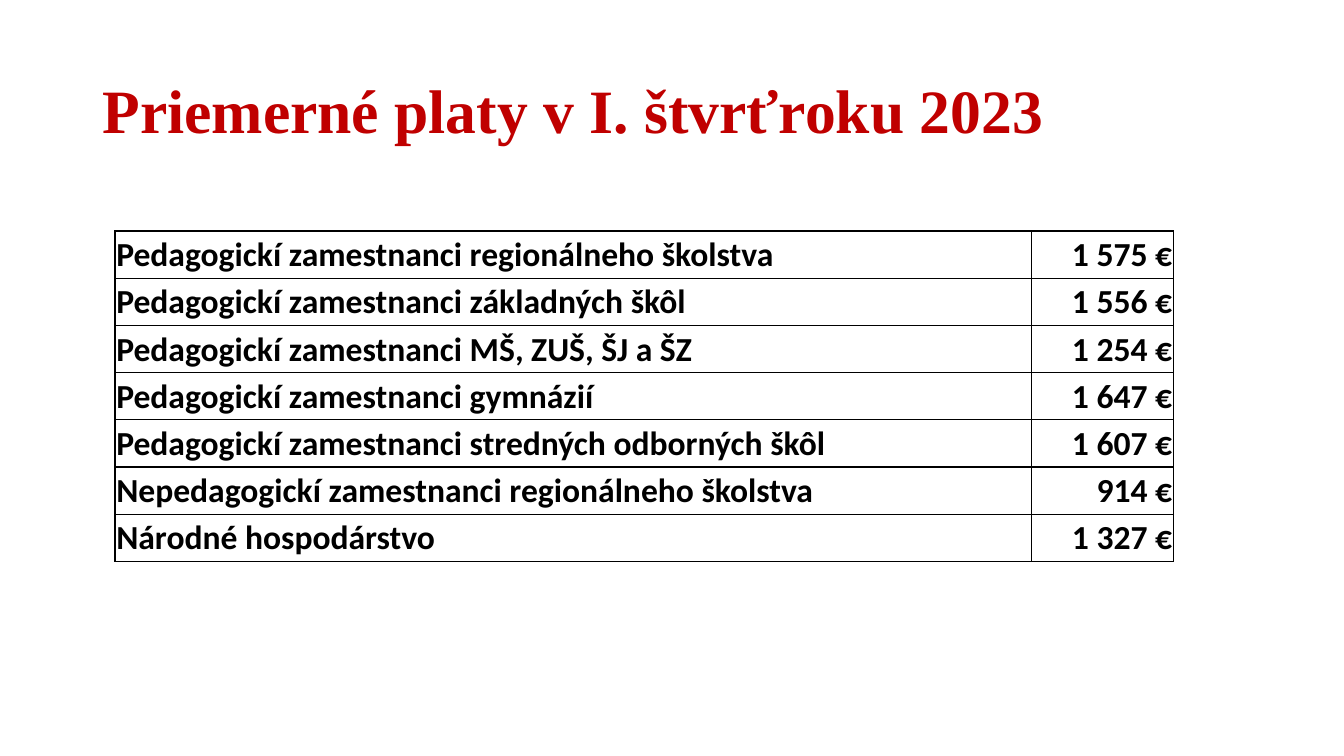
from dataclasses import dataclass

from lxml.etree import SubElement
from pptx import Presentation
from pptx.dml.color import RGBColor
from pptx.enum.text import MSO_ANCHOR, MSO_AUTO_SIZE, PP_ALIGN
from pptx.oxml.ns import qn
from pptx.slide import Slide
from pptx.table import _Cell
from pptx.text.text import _Paragraph
from pptx.util import Cm, Pt


@dataclass(frozen=True)
class TextStyle:
    font: str
    size: int
    color: str


@dataclass(frozen=True)
class Theme:
    title: TextStyle = TextStyle("Times New Roman", 44, "C00000")
    cell: TextStyle = TextStyle("Calibri", 24, "000000")
    border_color: str = "000000"
    border_width: int = Pt(1)


@dataclass(frozen=True)
class Salary:
    group: str
    amount: str


THEME = Theme()
TITLE = "Priemerné platy v I. štvrťroku 2023"
SALARIES = [
    Salary("Pedagogickí zamestnanci regionálneho školstva", "1 575 €"),
    Salary("Pedagogickí zamestnanci základných škôl", "1 556 €"),
    Salary("Pedagogickí zamestnanci MŠ, ZUŠ, ŠJ a ŠZ", "1 254 €"),
    Salary("Pedagogickí zamestnanci gymnázií", "1 647 €"),
    Salary("Pedagogickí zamestnanci stredných odborných škôl", "1 607 €"),
    Salary("Nepedagogickí zamestnanci regionálneho školstva", "914 €"),
    Salary("Národné hospodárstvo", "1 327 €"),
]
COLUMN_WIDTHS = (Cm(23.09), Cm(3.58))
ROW_HEIGHT = Cm(1.19)


def write(p: _Paragraph, text: str, style: TextStyle, align: PP_ALIGN) -> None:
    p.text = text
    p.alignment = align
    for r in p.runs:
        r.font.name = style.font
        r.font.size = Pt(style.size)
        r.font.bold = True
        r.font.color.rgb = RGBColor.from_string(style.color)


def add_borders(cell: _Cell) -> None:
    tc_pr = cell._tc.get_or_add_tcPr()
    for side in ("lnL", "lnR", "lnT", "lnB"):
        ln = SubElement(tc_pr, qn(f"a:{side}"), w=str(THEME.border_width))
        fill = SubElement(ln, qn("a:solidFill"))
        SubElement(fill, qn("a:srgbClr"), val=THEME.border_color)


def fill_cell(cell: _Cell, text: str, align: PP_ALIGN) -> None:
    cell.margin_left = cell.margin_right = cell.margin_top = Cm(0.03)
    cell.margin_bottom = 0
    cell.vertical_anchor = MSO_ANCHOR.MIDDLE
    add_borders(cell)
    cell.fill.background()
    write(cell.text_frame.paragraphs[0], text, THEME.cell, align)


def add_title(s: Slide) -> None:
    sp = s.shapes.title
    sp.left, sp.top, sp.width, sp.height = Cm(2.33), Cm(1.01), Cm(29.21), Cm(3.68)
    tf = sp.text_frame
    tf.word_wrap = True
    tf.auto_size = MSO_AUTO_SIZE.NONE
    tf.vertical_anchor = MSO_ANCHOR.MIDDLE
    p = tf.paragraphs[0]
    write(p, TITLE, THEME.title, PP_ALIGN.LEFT)
    p.line_spacing = 0.9


def add_salary_table(s: Slide) -> None:
    table = s.shapes.add_table(
        len(SALARIES), len(COLUMN_WIDTHS), Cm(2.9), Cm(5.82),
        sum(COLUMN_WIDTHS), ROW_HEIGHT * len(SALARIES),
    ).table
    table.first_row = table.horz_banding = False
    for column, width in zip(table.columns, COLUMN_WIDTHS):
        column.width = width
    for row, salary in zip(table.rows, SALARIES):
        row.height = ROW_HEIGHT
        fill_cell(row.cells[0], salary.group, PP_ALIGN.LEFT)
        fill_cell(row.cells[1], salary.amount, PP_ALIGN.RIGHT)


def main() -> None:
    prs = Presentation()
    prs.slide_width, prs.slide_height = Cm(33.87), Cm(19.05)
    s = prs.slides.add_slide(prs.slide_layouts.get_by_name("Title Only"))
    add_title(s)
    add_salary_table(s)
    prs.save("out.pptx")


if __name__ == "__main__":
    main()
